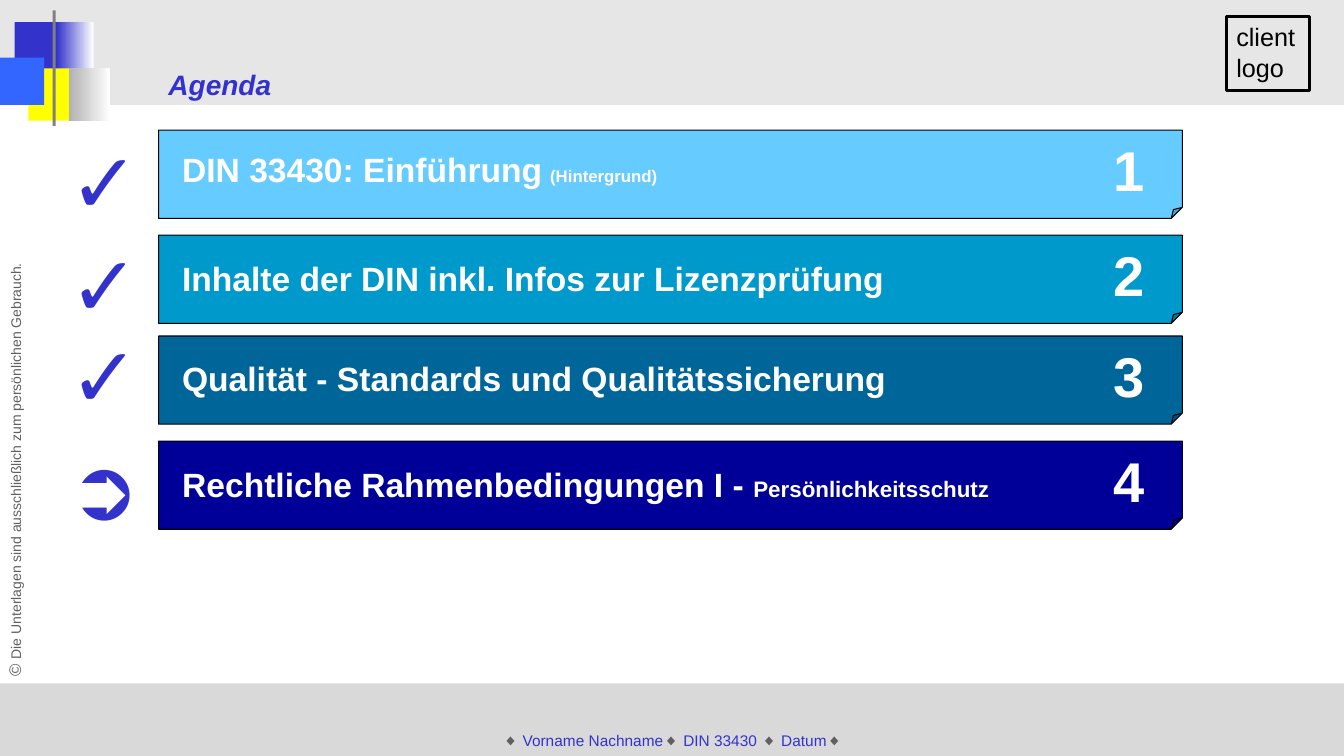
from lxml import etree
from pptx import Presentation
from pptx.dml.color import RGBColor
from pptx.enum.shapes import MSO_SHAPE
from pptx.enum.text import MSO_ANCHOR, MSO_AUTO_SIZE, PP_ALIGN
from pptx.oxml.ns import qn
from pptx.util import Pt

PX = 9525
RECTANGLE, FOLDED = MSO_SHAPE.RECTANGLE, MSO_SHAPE.FOLDED_CORNER
LEFT, CENTER = PP_ALIGN.LEFT, PP_ALIGN.CENTER
TOP, BOTTOM = MSO_ANCHOR.TOP, MSO_ANCHOR.BOTTOM
GROW, FIXED = MSO_AUTO_SIZE.SHAPE_TO_FIT_TEXT, MSO_AUTO_SIZE.NONE

WHITE = RGBColor(0xFF, 0xFF, 0xFF)
BLACK = RGBColor(0x00, 0x00, 0x00)
INDIGO = RGBColor(0x33, 0x33, 0xCC)
BLUE = RGBColor(0x33, 0x66, 0xFF)
YELLOW = RGBColor(0xFF, 0xFF, 0x00)
HEADER_GREY = RGBColor(0xE6, 0xE6, 0xE6)
FOOTER_GREY = RGBColor(0xD9, 0xD9, 0xD9)
FADE_GREY = RGBColor(0xB2, 0xB2, 0xB2)
BAR_GREY = RGBColor(0x80, 0x80, 0x80)
TEXT_GREY = RGBColor(0x60, 0x60, 0x60)
SKY = RGBColor(0x66, 0xCC, 0xFF)
CYAN = RGBColor(0x00, 0x99, 0xCC)
TEAL = RGBColor(0x00, 0x66, 0x99)
NAVY = RGBColor(0x00, 0x00, 0x99)

presentation = Presentation()
presentation.slide_width = 1280 * PX
presentation.slide_height = 720 * PX
slide = presentation.slides.add_slide(presentation.slide_layouts[6])


def add_box(kind, box, fill=None, fade=False, line=None, line_width=0.75):
    """Add a preset shape; fade runs its fill from left to right into white."""
    shape = slide.shapes.add_shape(kind, *(length * PX for length in box))
    shape.shadow.inherit = False
    if fade:
        shape.fill.gradient()
        shape.fill.gradient_angle = 0
        for stop, color in zip(shape.fill.gradient_stops, (fill, WHITE)):
            stop.color.rgb = color
    elif fill is not None:
        shape.fill.solid()
        shape.fill.fore_color.rgb = fill
    else:
        shape.fill.background()
    if line is None:
        shape.line.fill.background()
    else:
        shape.line.color.rgb = line
        shape.line.width = Pt(line_width)
    return shape


def add_text(box, *paragraphs, size, color, bold=False, italic=False,
             align=LEFT, anchor=TOP, wrap=True, rotation=0):
    """Each paragraph is a list of (text, overrides of size, color, italic)."""
    shape = slide.shapes.add_textbox(*(length * PX for length in box))
    shape.rotation = rotation
    frame = shape.text_frame
    frame.word_wrap = wrap
    frame.auto_size = FIXED if wrap else GROW
    frame.vertical_anchor = anchor
    for index, runs in enumerate(paragraphs):
        paragraph = frame.add_paragraph() if index else frame.paragraphs[0]
        paragraph.alignment = align
        for text, changes in runs:
            run = paragraph.add_run()
            run.text = text
            run.font.name = "Arial"
            run.font.bold = bold
            run.font.size = Pt(changes.get("size", size))
            run.font.italic = changes.get("italic", italic)
            run.font.color.rgb = changes.get("color", color)


# Bands, copyright and footer
add_box(RECTANGLE, (0, 651, 1280, 69), FOOTER_GREY)
add_box(RECTANGLE, (0, 0, 1280, 100), HEADER_GREY)
add_text((-196, 429, 420, 29),
         [("© ", {"size": 12}),
          ("Die Unterlagen sind ausschließlich zum persönlichen Gebrauch.", {})],
         size=10, color=TEXT_GREY, wrap=False, rotation=270)
diamond = {"color": TEXT_GREY, "italic": True}
add_text((34, 689, 1213, 30),
         [("◆ ", diamond), ("Vorname Nachname", {}), ("◆ ", diamond),
          ("DIN 33430 ", {}), ("◆ ", diamond), ("Datum", {}), ("◆", diamond)],
         size=11, color=INDIGO, align=CENTER, anchor=BOTTOM)

# Client placeholder and corner ornament
client_box = (1168, 16, 79, 70)
add_box(RECTANGLE, client_box, line=BLACK, line_width=2.25)
add_text(client_box, [("client", {})], [("logo", {})], size=18, color=BLACK)
for box, color, fade in [
    ((14, 21, 46, 50), INDIGO, False),
    ((54, 21, 35, 50), INDIGO, True),
    ((27, 65, 44, 50), YELLOW, False),
    ((66, 65, 39, 50), FADE_GREY, True),
    ((0, 55, 42, 45), BLUE, False),
    ((50, 10, 3, 110), BAR_GREY, False),
]:
    add_box(RECTANGLE, box, color, fade)

add_text((151, 60, 636, 42), [("Agenda", {})],
         size=20, color=INDIGO, bold=True, italic=True)

# Agenda rows: bar top, label top, icon top, icon, colour, label runs
rows = [
    (124, 137, 118, "✓", SKY,
     [("DIN 33430: Einführung", {}), (" ", {"size": 20}),
      ("(Hintergrund)", {"size": 12})]),
    (224, 241, 216, "✓", CYAN,
     [("Inhalte der DIN inkl. Infos zur Lizenzprüfung", {})]),
    (320, 336, 303, "✓", TEAL,
     [("Qualität - Standards und Qualitätssicherung", {})]),
    (420, 437, 409, "➲", NAVY,
     [("Rechtliche Rahmenbedingungen I - ", {}),
      ("Persönlichkeitsschutz", {"size": 16})]),
]
for number, (top, label_top, icon_top, icon, color, label) in enumerate(rows, 1):
    bar = add_box(FOLDED, (151, top, 975, 84), color, line=BLACK)
    fold_values = next(bar.element.iter(qn("a:avLst")))
    etree.SubElement(fold_values, qn("a:gd"), name="adj", fmla="val 12500")
    add_text((164, label_top, 870, 49), label, size=24, color=WHITE, bold=True)
    add_text((1047, top, 56, 74), [(str(number), {})], size=40, color=WHITE,
             bold=True, align=CENTER, anchor=BOTTOM, wrap=False)
    add_text((57, icon_top, 83, 106), [(icon, {})], size=60, color=INDIGO,
             bold=True, align=CENTER, anchor=BOTTOM, wrap=False)

presentation.save("out.pptx")
